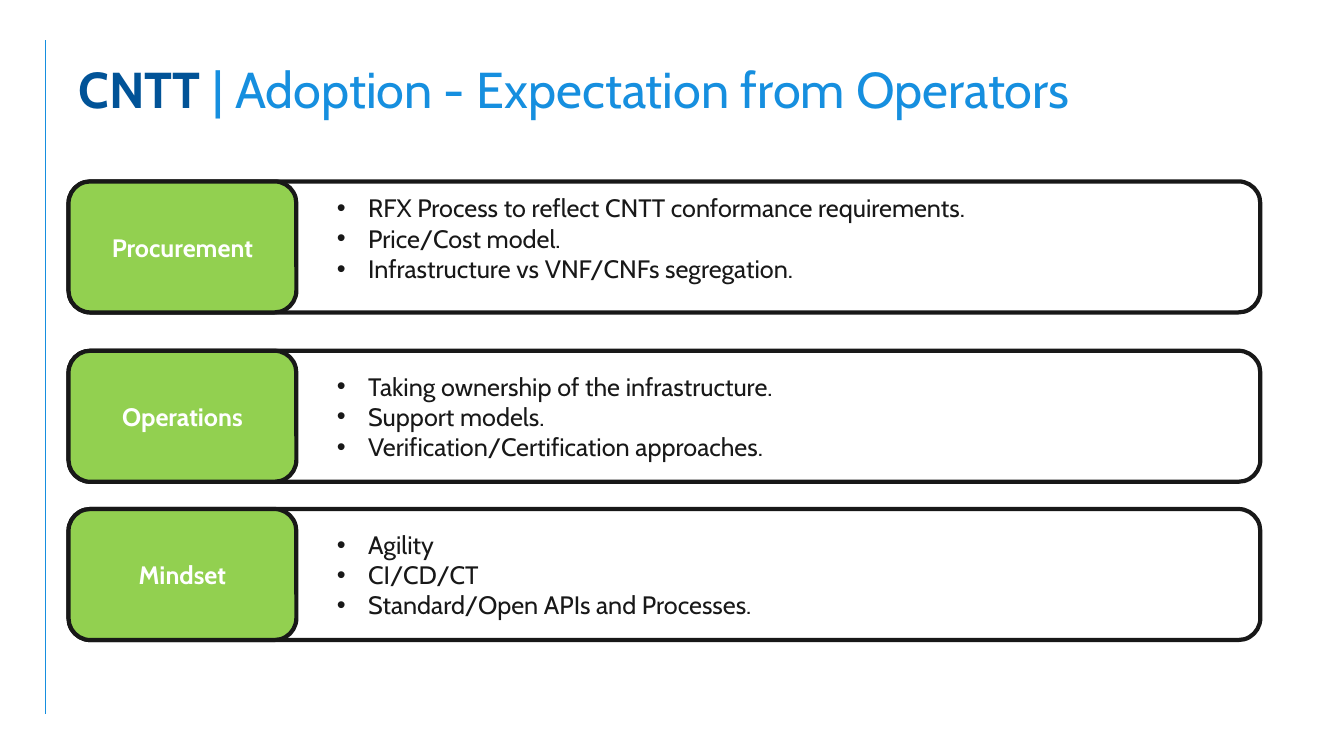
from dataclasses import dataclass

import pptx
import pptx.dml.color
import pptx.enum.shapes
import pptx.enum.text
import pptx.oxml.ns
import pptx.util
from lxml import etree

Inches = pptx.util.Inches
Pt = pptx.util.Pt
MIDDLE = pptx.enum.text.MSO_ANCHOR.MIDDLE
TOP = pptx.enum.text.MSO_ANCHOR.TOP


@dataclass(frozen=True)
class Theme:
    """Colours, font and type sizes of the slide."""

    navy: str = "015397"
    blue: str = "168FDF"
    ink: str = "181818"
    green: str = "92D050"
    white: str = "FFFFFF"
    font: str = "Cabin"
    title_size: int = 36
    body_size: int = 18
    outline: float = 3
    rule: float = 0.5


THEME = Theme()

EXPECTATIONS = [
    (1.8, "Procurement", TOP, [
        "RFX Process to reflect CNTT conformance requirements.",
        "Price/Cost model.",
        "Infrastructure vs VNF/CNFs segregation.",
    ]),
    (3.48, "Operations", MIDDLE, [
        "Taking ownership of the infrastructure.",
        "Support models.",
        "Verification/Certification approaches.",
    ]),
    (5.05, "Mindset", MIDDLE, [
        "Agility",
        "CI/CD/CT",
        "Standard/Open APIs and Processes.",
    ]),
]


def rgb(colour):
    """Return the colour object for a hex string."""
    return pptx.dml.color.RGBColor.from_string(colour)


def style(font, size, colour, bold=False):
    """Apply the theme font with a size, colour and weight."""
    font.name = THEME.font
    font.size = Pt(size)
    font.bold = bold
    font.color.rgb = rgb(colour)


def add_bullet(paragraph, indent, hanging):
    """Give a paragraph a round bullet with a hanging indent."""
    properties = paragraph._p.get_or_add_pPr()
    properties.set("marL", str(Inches(indent)))
    properties.set("indent", str(-Inches(hanging)))
    qn = pptx.oxml.ns.qn
    etree.SubElement(properties, qn("a:buFont"), typeface="Arial")
    etree.SubElement(properties, qn("a:buChar"), char="•")


def add_panel(group, left, top, width, height, fill, anchor):
    """Add an outlined rounded panel and return its text frame."""
    panel = group.shapes.add_shape(
        pptx.enum.shapes.MSO_SHAPE.ROUNDED_RECTANGLE,
        Inches(left), Inches(top), Inches(width), Inches(height))
    panel.shadow.inherit = False
    panel.fill.solid()
    panel.fill.fore_color.rgb = rgb(fill)
    panel.line.color.rgb = rgb(THEME.ink)
    panel.line.width = Pt(THEME.outline)
    panel.text_frame.word_wrap = True
    panel.text_frame.vertical_anchor = anchor
    return panel.text_frame


def add_margin_rule(slide, left, top, height):
    """Draw the thin vertical rule at the left margin."""
    rule = slide.shapes.add_connector(
        pptx.enum.shapes.MSO_CONNECTOR.STRAIGHT,
        Inches(left), Inches(top), Inches(left), Inches(top + height))
    rule.line.color.rgb = rgb(THEME.blue)
    rule.line.width = Pt(THEME.rule)
    etree.SubElement(rule._element.spPr, pptx.oxml.ns.qn("a:effectLst"))


def add_title(slide, left, top, width, height):
    """Place the two-tone slide title."""
    title = slide.shapes.add_textbox(
        Inches(left), Inches(top), Inches(width), Inches(height)).text_frame
    title.word_wrap = True
    title.vertical_anchor = MIDDLE
    heading = title.paragraphs[0]
    heading.line_spacing = 0.9
    for words, colour, bold in (
            ("CNTT", THEME.navy, True),
            (" | Adoption - Expectation from Operators", THEME.blue, False)):
        run = heading.add_run()
        run.text = words
        style(run.font, THEME.title_size, colour, bold)


def add_expectation(slide, left, top, width, height, topic, anchor, points):
    """Place a bulleted panel with its topic label on the left."""
    label_width = 2.26
    group = slide.shapes.add_group_shape()
    details = add_panel(group, left, top, width, height, THEME.white, anchor)
    details.text = "\n".join(points)
    for point in details.paragraphs:
        point.alignment = pptx.enum.text.PP_ALIGN.LEFT
        add_bullet(point, label_width + 0.55, 0.31)
        style(point.runs[0].font, THEME.body_size, THEME.ink)
    label = add_panel(group, left, top, label_width, height, THEME.green, MIDDLE)
    label.text = topic
    label.paragraphs[0].alignment = pptx.enum.text.PP_ALIGN.CENTER
    style(label.paragraphs[0].runs[0].font, THEME.body_size, THEME.white, True)


def main():
    """Build the slide and save it."""
    deck = pptx.Presentation()
    deck.slide_width = Inches(13.33)
    deck.slide_height = Inches(7.5)
    slide = deck.slides.add_slide(deck.slide_layouts[6])
    add_margin_rule(slide, 0.45, 0.4, 6.68)
    add_title(slide, 0.68, 0.4, 11.96, 1.02)
    for top, topic, anchor, points in EXPECTATIONS:
        add_expectation(slide, 0.68, top, 11.82, 1.3, topic, anchor, points)
    deck.save("out.pptx")


if __name__ == "__main__":
    main()
